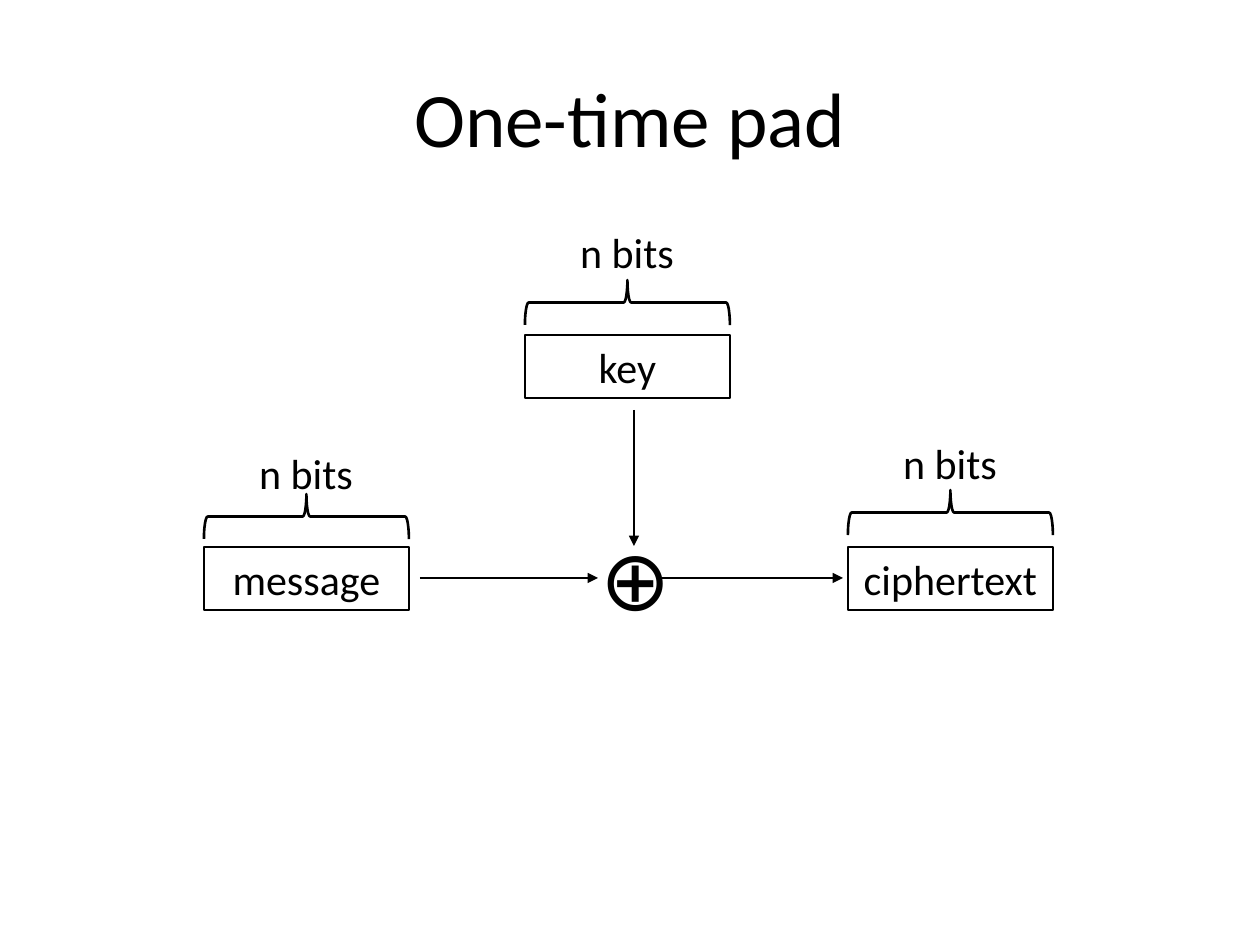
from dataclasses import dataclass

from lxml import etree
from pptx import Presentation
from pptx.dml.color import RGBColor
from pptx.enum.shapes import MSO_CONNECTOR, MSO_SHAPE
from pptx.enum.text import MSO_ANCHOR, PP_ALIGN
from pptx.oxml.ns import qn
from pptx.util import Pt

RECT = MSO_SHAPE.RECTANGLE
BRACE = MSO_SHAPE.RIGHT_BRACE
STRAIGHT = MSO_CONNECTOR.STRAIGHT
CENTER = PP_ALIGN.CENTER
MIDDLE = MSO_ANCHOR.MIDDLE
TOP = MSO_ANCHOR.TOP
PX = 914400 // 126


@dataclass(frozen=True)
class Theme:
    font: str = "Calibri"
    ink: RGBColor = RGBColor(0, 0, 0)
    paper: RGBColor = RGBColor(255, 255, 255)
    title: int = 44
    body: int = 24
    symbol: int = 48
    line: float = 1.5


class Deck:
    def __init__(self, prs, theme):
        self.theme = theme
        self.slide = prs.slides.add_slide(prs.slide_layouts[6])

    def set_text(self, sp, text, size, anchor):
        tf = sp.text_frame
        tf.text = text
        tf.vertical_anchor = anchor
        p = tf.paragraphs[0]
        p.alignment = CENTER
        font = p.runs[0].font
        font.name = self.theme.font
        font.size = Pt(size)
        font.color.rgb = self.theme.ink

    def outline(self, sp):
        sp.line.color.rgb = self.theme.ink
        sp.line.width = Pt(self.theme.line)

    def text(self, x, y, w, h, text, size, anchor=TOP, wrap=False):
        sp = self.slide.shapes.add_textbox(x * PX, y * PX, w * PX, h * PX)
        sp.text_frame.word_wrap = wrap
        self.set_text(sp, text, size, anchor)

    def box(self, x, y, w, h, text):
        sp = self.slide.shapes.add_shape(RECT, x * PX, y * PX, w * PX, h * PX)
        sp.shadow.inherit = False
        sp.fill.solid()
        sp.fill.fore_color.rgb = self.theme.paper
        self.outline(sp)
        self.set_text(sp, text, self.theme.body, MIDDLE)

    def brace(self, x, y, w, h):
        left = x * PX + (w - h) * PX // 2
        top = y * PX + (h - w) * PX // 2
        sp = self.slide.shapes.add_shape(BRACE, left, top, h * PX, w * PX)
        sp.rotation = 270
        sp.shadow.inherit = False
        sp.fill.background()
        self.outline(sp)

    def arrow(self, x1, y1, x2, y2):
        cxn = self.slide.shapes.add_connector(STRAIGHT, x1 * PX, y1 * PX, x2 * PX, y2 * PX)
        self.outline(cxn)
        sp_pr = cxn._element.spPr
        etree.SubElement(sp_pr.find(qn("a:ln")), qn("a:tailEnd"), type="triangle")
        etree.SubElement(sp_pr, qn("a:effectLst"))

    def block(self, x, y, name, brace_y, label_y):
        w = 205
        label_w = 120
        self.box(x, y, w, 63, name)
        self.brace(x, brace_y, w, 45)
        self.text(x + (w - label_w) // 2, label_y, label_w, 63, "n bits", self.theme.body)


def main():
    prs = Presentation()
    prs.slide_width = 1260 * PX
    prs.slide_height = 945 * PX
    theme = Theme()
    deck = Deck(prs, theme)
    deck.text(63, 38, 1134, 158, "One-time pad", theme.title, MIDDLE, True)
    deck.block(525, 335, "key", 280, 220)
    deck.block(204, 547, "message", 494, 441)
    deck.block(848, 547, "ciphertext", 490, 431)
    deck.text(588, 520, 91, 115, "⊕", theme.symbol)
    deck.arrow(634, 410, 634, 546)
    deck.arrow(420, 578, 598, 578)
    deck.arrow(662, 578, 843, 578)
    prs.save("out.pptx")


if __name__ == "__main__":
    main()
